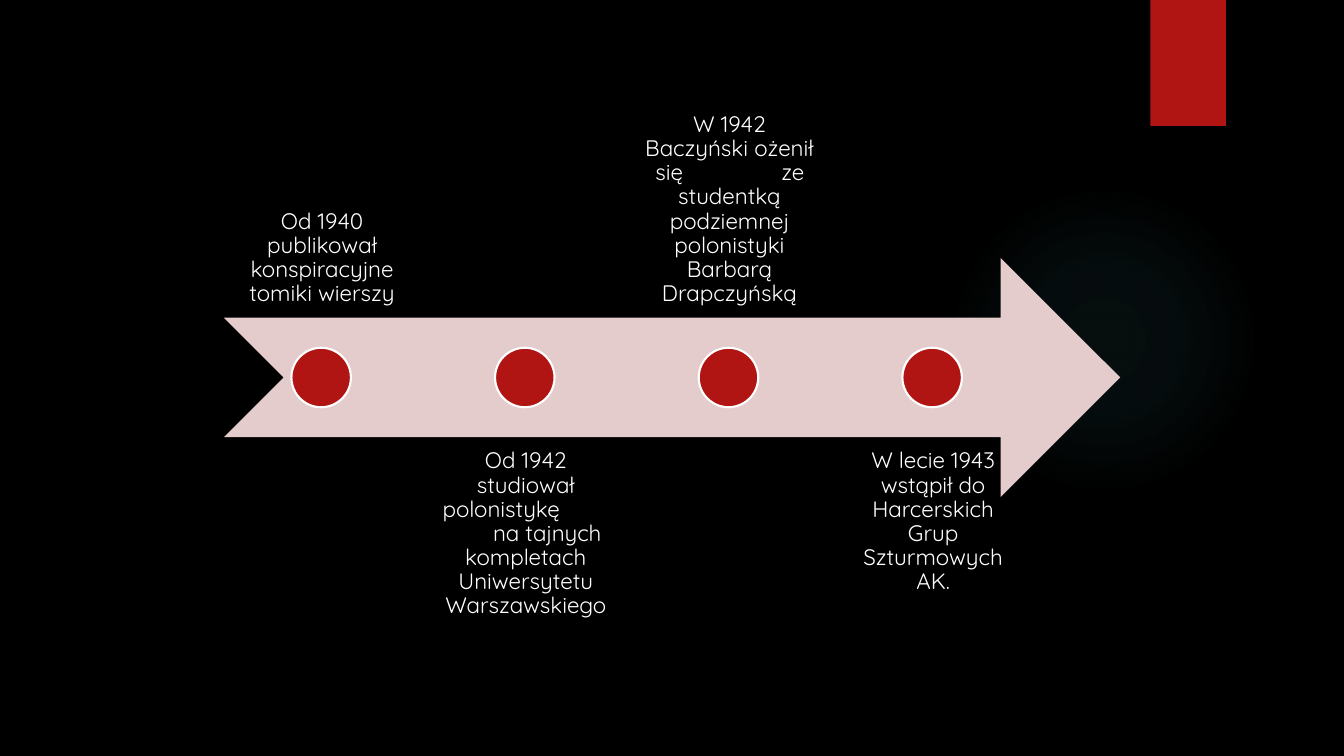
from dataclasses import dataclass

from lxml import etree
from pptx import Presentation
from pptx.dml.color import RGBColor as Color
from pptx.enum.shapes import MSO_SHAPE as Shape
from pptx.enum.text import MSO_ANCHOR as Anchor, PP_ALIGN as Align
from pptx.oxml import parse_xml
from pptx.oxml.ns import nsdecls, qn
from pptx.util import Inches, Pt


@dataclass
class Theme:
    background: str = "000000"
    accent: str = "B01513"
    arrow: str = "E4CCCC"
    light: str = "FFFFFF"
    glow: str = "50B9C1"
    font: str = "Quicksand"
    size: int = 16


theme = Theme()


def add_filled(kind, left, top, width, height, color):
    shape = page.shapes.add_shape(kind, Inches(left), Inches(top), Inches(width), Inches(height))
    shape.shadow.inherit = False
    shape.fill.solid()
    shape.fill.fore_color.rgb = Color.from_string(color)
    shape.line.fill.background()
    return shape


deck = Presentation()
deck.slide_width = Inches(13.33)
deck.slide_height = Inches(7.5)
page = deck.slides.add_slide(deck.slide_layouts[6])
page.background.fill.solid()
page.background.fill.fore_color.rgb = Color.from_string(theme.background)

# Soft round glow behind the arrow head
glow = add_filled(Shape.OVAL, 9.41, 1.83, 3.08, 3.08, theme.glow)
stops = "".join(
    f'<a:gs pos="{position * 1000}"><a:srgbClr val="{theme.glow}">'
    f'<a:alpha val="{alpha * 1000}"/></a:srgbClr></a:gs>'
    for position, alpha in [(0, 7), (36, 6), (69, 0)]
)
gradient = parse_xml(
    f'<a:gradFill {nsdecls("a")}><a:gsLst>{stops}</a:gsLst><a:path path="circle">'
    '<a:fillToRect l="50000" t="50000" r="50000" b="50000"/></a:path></a:gradFill>'
)
solid = glow.fill._xPr.find(qn("a:solidFill"))
solid.getparent().replace(solid, gradient)

# Corner ribbon and timeline arrow
add_filled(Shape.RECTANGLE, 11.41, 0, 0.75, 1.25, theme.accent)
add_filled(Shape.NOTCHED_RIGHT_ARROW, 2.22, 2.56, 8.89, 2.37, theme.arrow)

# Each event is a list of paragraphs: text and its tab stops in inches
events = [
    [("Od 1940 publikował konspiracyjne tomiki wierszy", [])],
    [
        ("Od 1942 studiował", []),
        ("\tpolonistykę", [0.02]),
        ("\tna tajnych", [0.52]),
        ("kompletach Uniwersytetu Warszawskiego", []),
    ],
    [
        ("W 1942 Baczyński ożenił", []),
        ("\tsię\tze", [0.11, 1.36]),
        ("studentką podziemnej polonistyki Barbarą Drapczyńską", []),
    ],
    [("W lecie 1943 wstąpił do Harcerskich Grup Szturmowych AK.", [])],
]

# Labels alternate above and below the arrow, each with its dot
for index, paragraphs in enumerate(events):
    above = index % 2 == 0
    left = 2.23 + index * 2.02
    box = page.shapes.add_textbox(
        Inches(left), Inches(0.79 if above else 4.34), Inches(1.93), Inches(2.37)
    )
    frame = box.text_frame
    frame.word_wrap = True
    frame.vertical_anchor = Anchor.BOTTOM if above else Anchor.TOP
    frame.margin_left = frame.margin_right = Inches(0.12)
    frame.margin_top = frame.margin_bottom = Inches(0.12)
    for number, (text, tabs) in enumerate(paragraphs):
        para = frame.paragraphs[0] if number == 0 else frame.add_paragraph()
        para.alignment = Align.LEFT if tabs else Align.CENTER
        para.line_spacing = 0.9
        if tabs:
            tab_list = etree.SubElement(para._p.get_or_add_pPr(), qn("a:tabLst"))
            for stop in tabs:
                etree.SubElement(tab_list, qn("a:tab"), pos=str(Inches(stop)), algn="l")
        span = para.add_run()
        span.text = text
        span.font.name = theme.font
        span.font.size = Pt(theme.size)
        span.font.color.rgb = Color.from_string(theme.light)

    dot = add_filled(Shape.OVAL, left + 0.66, 3.45, 0.59, 0.59, theme.accent)
    dot.line.color.rgb = Color.from_string(theme.light)
    dot.line.width = Pt(1.5)

deck.save("out.pptx")
